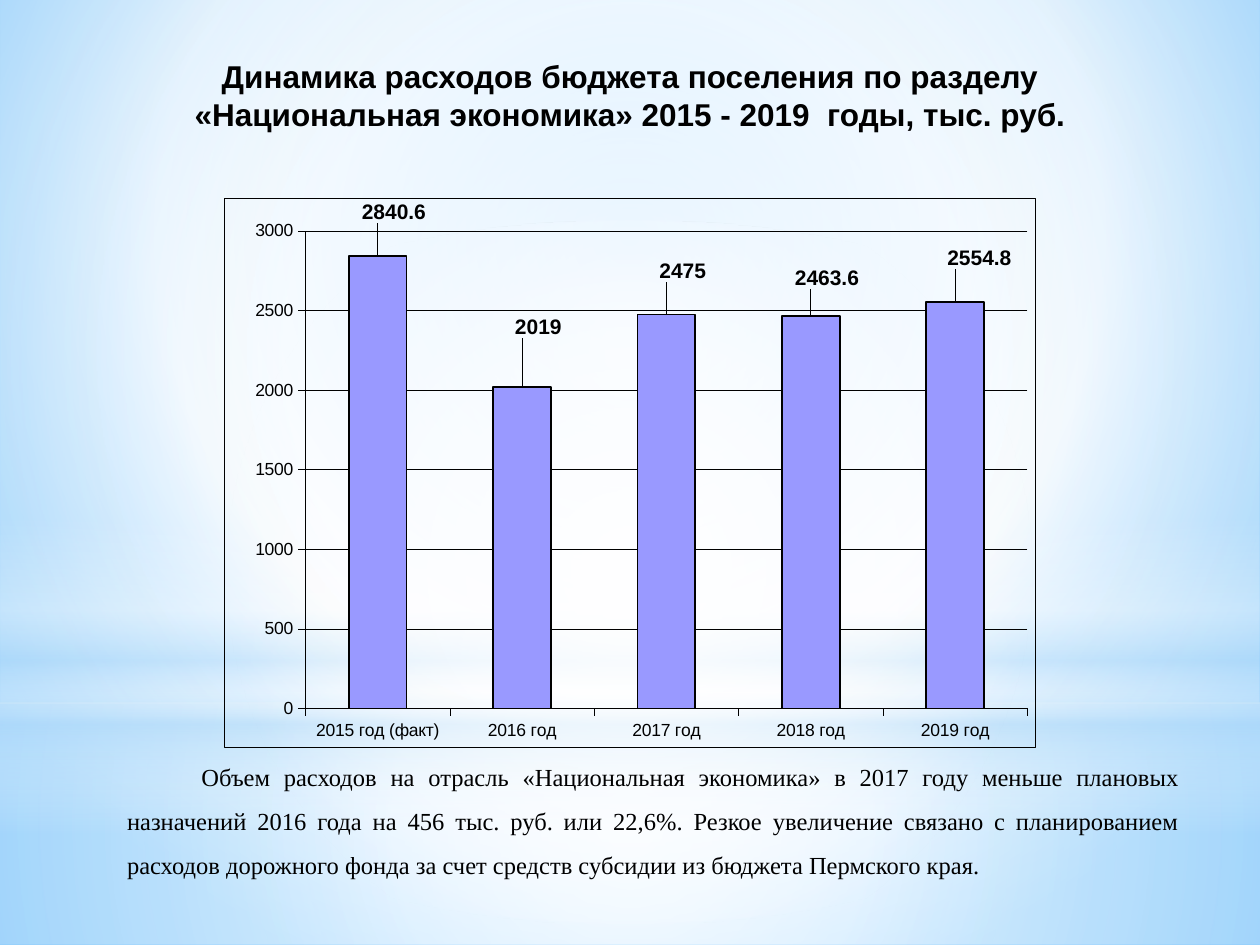
from lxml import etree
from pptx import Presentation
from pptx.chart.data import CategoryChartData
from pptx.dml.color import RGBColor
from pptx.enum.chart import XL_CHART_TYPE, XL_LABEL_POSITION, XL_TICK_LABEL_POSITION, XL_TICK_MARK
from pptx.enum.shapes import MSO_SHAPE
from pptx.enum.text import MSO_ANCHOR, PP_ALIGN
from pptx.oxml import parse_xml
from pptx.oxml.ns import nsdecls, qn
from pptx.util import Inches, Pt

RECT, OVAL = MSO_SHAPE.RECTANGLE, MSO_SHAPE.OVAL
CENTER, JUSTIFY = PP_ALIGN.CENTER, PP_ALIGN.JUSTIFY
MIDDLE, TOP = MSO_ANCHOR.MIDDLE, MSO_ANCHOR.TOP
COLUMNS = XL_CHART_TYPE.COLUMN_CLUSTERED
LABEL_ABOVE = XL_LABEL_POSITION.OUTSIDE_END
LABELS_LOW = XL_TICK_LABEL_POSITION.LOW
TICK_OUT, TICK_NONE = XL_TICK_MARK.OUTSIDE, XL_TICK_MARK.NONE
MIDPOINT = (50, 50, 50, 50)


def rgb(value):
    return RGBColor.from_string(value)


def set_gradient(parent, stops, focus):
    """Swap the solid fill in parent for a gradient: circular, or vertical without focus."""
    gradient = etree.Element(qn("a:gradFill"), rotWithShape="1")
    stop_list = etree.SubElement(gradient, qn("a:gsLst"))
    for position, color, opacity in stops:
        stop = etree.SubElement(stop_list, qn("a:gs"), pos=str(position * 1000))
        tint = etree.SubElement(stop, qn("a:srgbClr"), val=color)
        etree.SubElement(tint, qn("a:alpha"), val=str(opacity * 1000))
    if focus:
        circle = etree.SubElement(gradient, qn("a:path"), path="circle")
        sides = {side: str(share * 1000) for side, share in zip("ltrb", focus)}
        etree.SubElement(circle, qn("a:fillToRect"), sides)
    else:
        etree.SubElement(gradient, qn("a:lin"), ang="5400000", scaled="0")
    parent.replace(parent.find(qn("a:solidFill")), gradient)


prs = Presentation()
prs.slide_width, prs.slide_height = Inches(10), Inches(7.5)
slide = prs.slides.add_slide(prs.slide_layouts[6])

# Background glow
slide.background.fill.solid()
slide.background.fill.fore_color.rgb = rgb("FFFFFF")
set_gradient(next(slide.element.iter(qn("p:bgPr"))),
             [(0, "9ED5FF", 100), (60, "FFFFFF", 100), (100, "5BB9FF", 100)],
             (20, 10, 20, 60))

# Translucent layers: floor, sky, horizon, central light
layers = [
    (RECT, 5.58, 1.92, MIDPOINT,
     [(0, "FFFFFF", 91), (37, "FFFFFF", 76), (100, "B4DCFA", 79)]),
    (RECT, 0, 5.58, MIDPOINT,
     [(0, "FFFFFF", 89), (48, "FFFFFF", 62), (100, "B4DCFA", 79)]),
    (RECT, 4.12, 2.5, None,
     [(0, "FFFFFF", 0), (29, "FFFFFF", 30), (45, "B4DCFA", 40),
      (55, "FFFFFF", 26), (65, "B4DCFA", 60), (100, "FFFFFF", 0)]),
    (OVAL, 1.75, 5.58, MIDPOINT, [(0, "FFFFFF", 100), (56, "FFFFFF", 0)]),
]
for outline, top, height, focus, stops in layers:
    layer = slide.shapes.add_shape(outline, 0, Inches(top), Inches(10), Inches(height))
    layer.shadow.inherit = False
    layer.line.fill.background()
    layer.fill.solid()
    set_gradient(layer.element.spPr, stops, focus)

# Title and commentary
title = ("Динамика расходов бюджета поселения по разделу\n"
         "«Национальная экономика» 2015 - 2019  годы, тыс. руб.")
comment = ("Объем расходов на отрасль «Национальная экономика» в 2017 году меньше плановых "
           "назначений 2016 года на 456 тыс. руб. или 22,6%. Резкое увеличение связано с "
           "планированием расходов дорожного фонда за счет средств субсидии из бюджета "
           "Пермского края.")
texts = [
    (title, (1.41, 0.4, 7.18, 0.71), 0,
     {"word_wrap": False, "vertical_anchor": MIDDLE},
     {"alignment": CENTER},
     {"name": "Arial", "size": Pt(18), "bold": True}),
    (comment, (0.91, 5.88, 8.55, 1.16), 0.59,
     {"word_wrap": True, "vertical_anchor": TOP},
     {"alignment": JUSTIFY, "line_spacing": 1.5},
     {"name": "Times New Roman", "size": Pt(14)}),
]
for wording, place, indent, frame_format, paragraph_format, font_format in texts:
    frame = slide.shapes.add_textbox(*map(Inches, place)).text_frame
    paragraph = frame.paragraphs[0]
    paragraph.text = wording
    for target, values in [(frame, frame_format), (paragraph, paragraph_format)]:
        for key, value in values.items():
            setattr(target, key, value)
    paragraph._p.get_or_add_pPr().set("indent", str(Inches(indent)))
    for run in paragraph.runs:
        run.font.color.rgb = rgb("000000")
        for key, value in font_format.items():
            setattr(run.font, key, value)

# Spending by year, with the shift of each value label as a share of the chart
spending = [
    ("2015 год (факт)", 2840.6, (0.02, -0.05)),
    ("2016 год", 2019, (0.02, -0.08)),
    ("2017 год", 2475, (0.02, -0.05)),
    ("2018 год", 2463.6, (0.02, -0.04)),
    ("2019 год", 2554.8, (0.03, -0.05)),
]
data = CategoryChartData()
data.categories = [year for year, _, _ in spending]
data.add_series("Расходы", [amount for _, amount, _ in spending])
chart = slide.shapes.add_chart(COLUMNS, Inches(1.78), Inches(1.57),
                               Inches(6.44), Inches(4.36), data).chart
chart.has_legend = chart.has_title = False
chart.font.name, chart.font.size = "Arial", Pt(10)
chart.font.color.rgb = rgb("000000")

# Columns
plot = chart.plots[0]
plot.gap_width, plot.vary_by_categories = 150, False
columns = plot.series[0]
columns.format.fill.solid()
columns.format.fill.fore_color.rgb = rgb("9999FF")

# Axes, gridlines and outlines
years, amounts = chart.category_axis, chart.value_axis
years.tick_label_position = LABELS_LOW
axis_format = {"major_tick_mark": TICK_OUT, "minor_tick_mark": TICK_NONE}
for axis in (years, amounts):
    for key, value in axis_format.items():
        setattr(axis, key, value)
scale = {"minimum_scale": 0, "maximum_scale": 3000, "major_unit": 500}
for key, value in scale.items():
    setattr(amounts, key, value)
strokes = [(columns, 1), (years, 0.25), (amounts, 0.25), (amounts.major_gridlines, 0.25)]
for part, width in strokes:
    part.format.line.color.rgb = rgb("000000")
    part.format.line.width = Pt(width)

# Value labels
label_format = {"name": "Arial", "size": Pt(12), "bold": True}
for index in range(len(spending)):
    label = columns.points[index].data_label
    label.position = LABEL_ABOVE
    label.font.color.rgb = rgb("000000")
    for key, value in label_format.items():
        setattr(label.font, key, value)

# Manual layout of labels and plot area
chart_space = chart.element if hasattr(chart, "element") else chart._chartSpace
layouts = [(label, 1, dict(zip("xy", shift)))
           for label, (_, _, shift) in zip(chart_space.iter(qn("c:dLbl")), spending)]
plot_area = next(chart_space.iter(qn("c:plotArea")))
layouts.append((plot_area, 0, {"layoutTarget": "inner", "xMode": "edge", "yMode": "edge",
                               "x": 0.1, "y": 0.06, "w": 0.89, "h": 0.87}))
for owner, index, values in layouts:
    for previous in owner.findall(qn("c:layout")):
        owner.remove(previous)
    layout = etree.Element(qn("c:layout"))
    manual = etree.SubElement(layout, qn("c:manualLayout"))
    for key, value in values.items():
        etree.SubElement(manual, qn(f"c:{key}"), val=str(value))
    owner.insert(index, layout)

# Chart border
chart_space.find(qn("c:chart")).addnext(parse_xml(
    f'<c:spPr {nsdecls("c", "a")}><a:noFill/><a:ln w="{Pt(0.25)}"><a:solidFill>'
    '<a:srgbClr val="000000"/></a:solidFill></a:ln></c:spPr>'))

prs.save("out.pptx")
